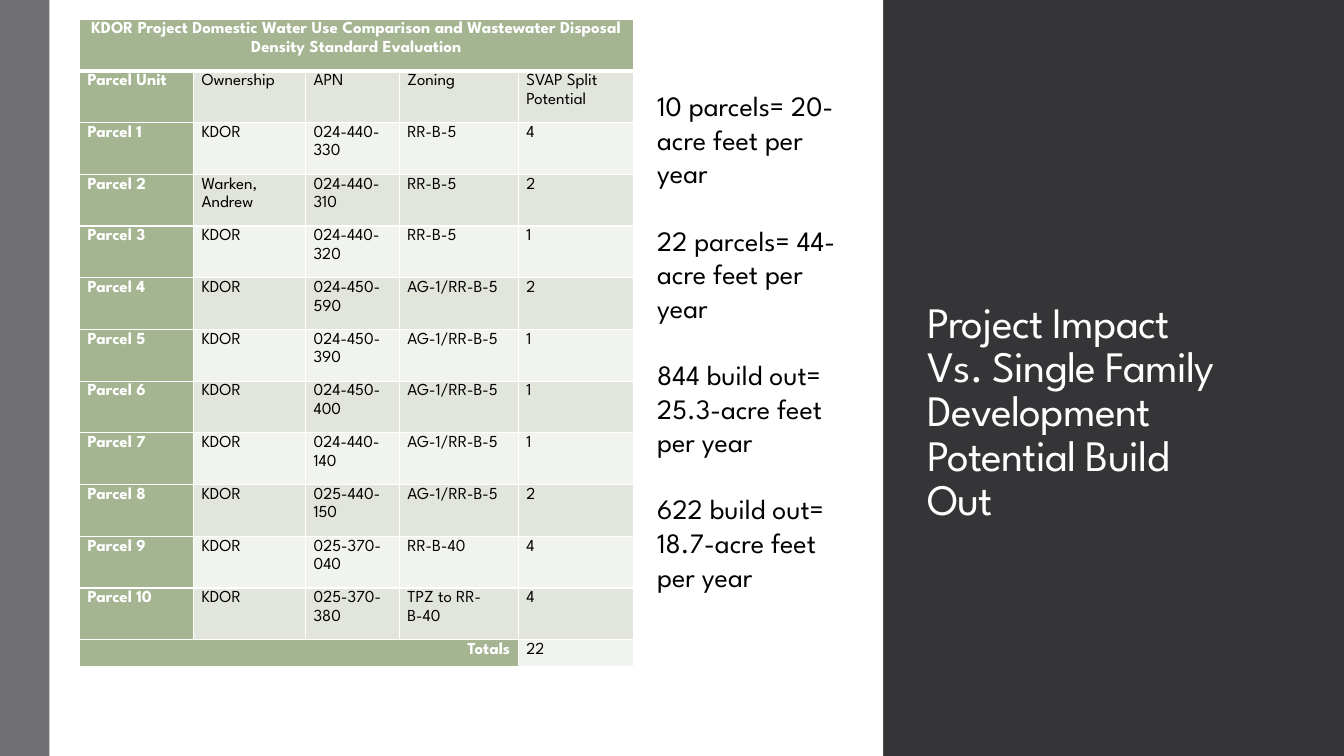
from lxml.etree import SubElement
from pptx import Presentation
from pptx.dml.color import RGBColor
from pptx.enum.shapes import MSO_SHAPE
from pptx.enum.text import MSO_ANCHOR, MSO_AUTO_SIZE, PP_ALIGN
from pptx.oxml.ns import qn
from pptx.util import Emu, Pt

EMU_PER_PX = 9144
COLORS = {
    "white": "FFFFFF",
    "black": "000000",
    "dark": "353537",
    "gray": "6F6F74",
    "green": "A5B592",
    "band_dark": "E1E5DC",
    "band_light": "F0F3EE",
}

TABLE_TITLE = (
    "KDOR Project Domestic Water Use Comparison and "
    "Wastewater Disposal Density Standard Evaluation"
)
HEADINGS = ["Parcel Unit", "Ownership", "APN", "Zoning", "SVAP Split Potential"]
PARCELS = [
    ("KDOR", "024-440-330", "RR-B-5", 4),
    ("Warken, Andrew", "024-440-310", "RR-B-5", 2),
    ("KDOR", "024-440-320", "RR-B-5", 1),
    ("KDOR", "024-450-590", "AG-1/RR-B-5", 2),
    ("KDOR", "024-450-390", "AG-1/RR-B-5", 1),
    ("KDOR", "024-450-400", "AG-1/RR-B-5", 1),
    ("KDOR", "024-440-140", "AG-1/RR-B-5", 1),
    ("KDOR", "025-440-150", "AG-1/RR-B-5", 2),
    ("KDOR", "025-370-040", "RR-B-40", 4),
    ("KDOR", "025-370-380", "TPZ to RR-B-40", 4),
]
COLUMN_WIDTHS = [113, 111, 93, 118, 114]
FULL_ROWS_HEIGHT = 616
TOTALS_HEIGHT = 27
WATER_USE = [
    "10 parcels= 20-acre feet per year",
    "22 parcels= 44-acre feet per year",
    "844 build out= 25.3-acre feet per year",
    "622 build out= 18.7-acre feet per year",
]
SLIDE_TITLE = "Project Impact Vs. Single Family Development Potential Build Out"


def px(length):
    return Emu(length * EMU_PER_PX)


def color(name):
    return RGBColor.from_string(COLORS[name])


class SlideBuilder:
    font = "League Spartan"

    def __init__(self, slide):
        self.slide = slide

    def format_text(self, paragraph, size, color_name, bold=False, tracking=None):
        for run in paragraph.runs:
            run.font.name = self.font
            run.font.size = Pt(size)
            run.font.bold = bold
            run.font.color.rgb = color(color_name)
            if tracking is not None:
                run.font._element.set("spc", str(tracking))

    def rectangle(self, left, top, width, height, fill):
        shape = self.slide.shapes.add_shape(
            MSO_SHAPE.RECTANGLE, px(left), px(top), px(width), px(height)
        )
        shape.shadow.inherit = False
        shape.fill.solid()
        shape.fill.fore_color.rgb = color(fill)
        shape.line.fill.background()

    def text(self, left, top, width, height, lines, size, color_name,
             anchor=MSO_ANCHOR.TOP, spacing=1.0, gap=0, tracking=None, grow=False):
        shape = self.slide.shapes.add_textbox(px(left), px(top), px(width), px(height))
        text_frame = shape.text_frame
        text_frame.word_wrap = True
        text_frame.vertical_anchor = anchor
        if grow:
            text_frame.auto_size = MSO_AUTO_SIZE.SHAPE_TO_FIT_TEXT
        text_frame.text = "\n".join(lines)
        for paragraph in text_frame.paragraphs:
            paragraph.line_spacing = spacing
            self.format_text(paragraph, size, color_name, tracking=tracking)
        for paragraph in text_frame.paragraphs[:-1]:
            paragraph.space_after = Pt(gap)

    def table(self, left, top, column_widths, row_heights):
        table = self.slide.shapes.add_table(
            len(row_heights), len(column_widths), px(left), px(top),
            px(sum(column_widths)), sum(row_heights)
        ).table
        for column, width in zip(table.columns, column_widths):
            column.width = px(width)
        for row, height in zip(table.rows, row_heights):
            row.height = height
        return table

    def cell(self, cell, text, fill, header=False, alignment=PP_ALIGN.LEFT, bottom=1):
        for side, width in (("L", 1), ("R", 1), ("T", 1), ("B", bottom)):
            border = SubElement(
                cell._tc.get_or_add_tcPr(), qn(f"a:ln{side}"), w=str(Pt(width))
            )
            border_fill = SubElement(border, qn("a:solidFill"))
            SubElement(border_fill, qn("a:srgbClr"), val=COLORS["white"])
        cell.fill.solid()
        cell.fill.fore_color.rgb = color(fill)
        cell.margin_left = cell.margin_right = px(8)
        cell.margin_top = cell.margin_bottom = 0
        cell.text_frame.text = text
        paragraph = cell.text_frame.paragraphs[0]
        paragraph.alignment = alignment
        paragraph.line_spacing = 1.2
        self.format_text(paragraph, 12, "white" if header else "black", bold=header)


def add_parcel_table(builder):
    body = [HEADINGS] + [
        (f"Parcel {number}", *map(str, parcel))
        for number, parcel in enumerate(PARCELS, 1)
    ]
    full_rows = len(body) + 1
    row_height = Emu(px(FULL_ROWS_HEIGHT) // full_rows)
    row_heights = [row_height] * full_rows + [px(TOTALS_HEIGHT)]
    table = builder.table(79, 19, COLUMN_WIDTHS, row_heights)
    last_row, last_column = full_rows, len(COLUMN_WIDTHS) - 1

    table.cell(0, 0).merge(table.cell(0, last_column))
    table.cell(last_row, 0).merge(table.cell(last_row, last_column - 1))
    for column in range(last_column + 1):
        builder.cell(table.cell(0, column), TABLE_TITLE if column == 0 else "",
                     "green", True, PP_ALIGN.CENTER, bottom=3)
    for row, values in enumerate(body, 1):
        band = "band_dark" if row % 2 else "band_light"
        for column, value in enumerate(values):
            header = column == 0
            builder.cell(table.cell(row, column), value,
                         "green" if header else band, header)
    for column in range(last_column):
        builder.cell(table.cell(last_row, column), "Totals" if column == 0 else "",
                     "green", True, PP_ALIGN.RIGHT)
    total = sum(parcel[-1] for parcel in PARCELS)
    builder.cell(table.cell(last_row, last_column), str(total), "band_light")


def main():
    presentation = Presentation()
    presentation.slide_width = px(1333)
    presentation.slide_height = px(750)
    slide = presentation.slides.add_slide(presentation.slide_layouts[6])
    builder = SlideBuilder(slide)
    builder.rectangle(0, 0, 50, 750, "gray")
    builder.rectangle(50, 0, 1185, 750, "dark")
    builder.text(910, 83, 306, 442, [SLIDE_TITLE], 31, "white",
                 anchor=MSO_ANCHOR.BOTTOM, spacing=0.85, tracking=-50)
    builder.rectangle(49, 0, 827, 750, "white")
    builder.rectangle(1235, 0, 98, 750, "dark")
    add_parcel_table(builder)
    builder.text(642, 83, 216, 545, WATER_USE, 20, "black", gap=24, grow=True)
    presentation.save("out.pptx")


if __name__ == "__main__":
    main()
